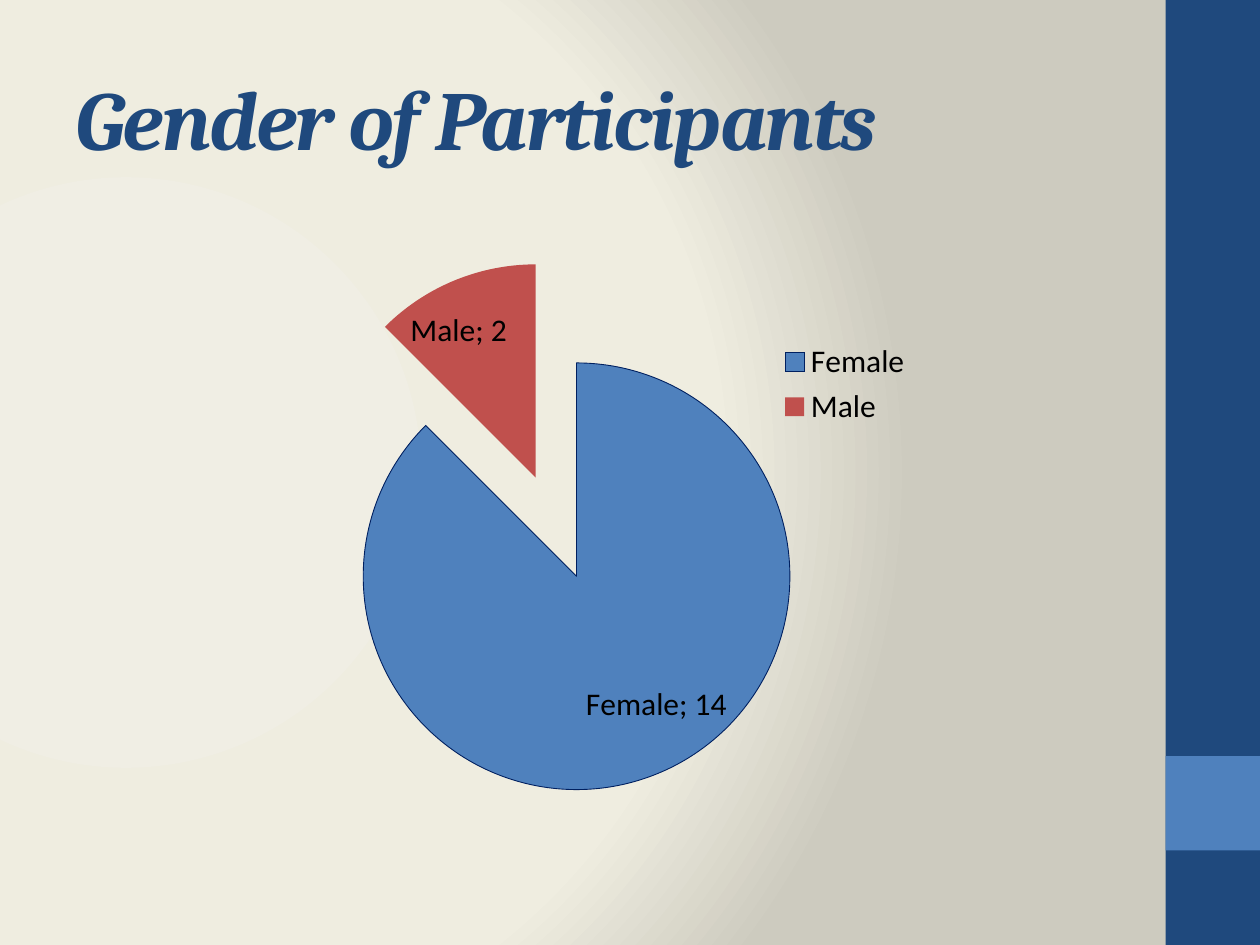
from lxml import etree
from pptx import Presentation
from pptx.chart.data import CategoryChartData
from pptx.dml.color import RGBColor
from pptx.enum.chart import XL_CHART_TYPE as ChartType, XL_LABEL_POSITION as LabelPos, XL_LEGEND_POSITION as LegendPos
from pptx.enum.shapes import MSO_SHAPE as Shape
from pptx.enum.text import MSO_ANCHOR as Anchor
from pptx.oxml import parse_xml
from pptx.oxml.ns import nsdecls, qn
from pptx.util import Inches, Pt


def rgb(value):
    return RGBColor.from_string(value)


def manual_layout(**settings):
    values = "".join(f'<c:{key} val="{value}"/>' for key, value in settings.items())
    return parse_xml(f'<c:layout {nsdecls("c")}><c:manualLayout>{values}</c:manualLayout></c:layout>')


prs = Presentation()
prs.slide_width = Inches(10)
prs.slide_height = Inches(7.5)
slide = prs.slides.add_slide(prs.slide_layouts[6])

background = slide.background.fill
background.gradient()
stops = "".join(
    f'<a:gs pos="{position * 1000}"><a:srgbClr val="{color}"/></a:gs>'
    for position, color in [(0, "F0EEE4"), (75, "EFEDE0"), (100, "CDCBBF")]
)
glow = parse_xml(
    f'<a:gradFill {nsdecls("a")} rotWithShape="1"><a:gsLst>{stops}</a:gsLst>'
    '<a:path path="circle"><a:fillToRect l="20000" t="50000" r="100000" b="50000"/></a:path>'
    "</a:gradFill>"
)
default_glow = slide.element.find(".//" + qn("a:gradFill"))
default_glow.getparent().replace(default_glow, glow)

for top, height, color in [(0, 7.5, "1F497D"), (6, 0.75, "4F81BD")]:
    band = slide.shapes.add_shape(Shape.RECTANGLE, Inches(9.25), Inches(top), Inches(0.75), Inches(height))
    band.shadow.inherit = False
    band.fill.solid()
    band.fill.fore_color.rgb = rgb(color)
    band.line.fill.background()

heading = slide.shapes.add_textbox(Inches(0.5), Inches(0.3), Inches(8.33), Inches(1.25)).text_frame
heading.word_wrap = True
heading.vertical_anchor = Anchor.MIDDLE
heading_run = heading.paragraphs[0].add_run()
heading_run.text = "Gender of Participants"
heading_run.font.name = "Cambria"
heading_run.font.size = Pt(48)
heading_run.font.bold = True
heading_run.font.italic = True
heading_run.font.color.rgb = rgb("1F497D")
heading_run.font._element.set("spc", "-100")

genders = CategoryChartData()
genders.categories = ["Female", "Male"]
genders.add_series("Series 1", [14, 2])
pie = slide.shapes.add_chart(ChartType.PIE, Inches(0), Inches(1.5), Inches(9), Inches(4.8), genders).chart
pie.has_title = False
pie.font.name = "Calibri"
pie.font.size = Pt(18)
pie.font.color.rgb = rgb("000000")

plot_area = pie._chartSpace.chart.plotArea
for old_layout in plot_area.findall(qn("c:layout")):
    plot_area.remove(old_layout)
plot_area.insert(0, manual_layout(layoutTarget="inner", xMode="edge", yMode="edge", x=0.203, y=0.118, w=0.575, h=0.882))

pie.has_legend = True
pie.legend.position = LegendPos.RIGHT
pie.legend.include_in_layout = False
legend_element = pie.legend._element
for old_layout in legend_element.findall(qn("c:layout")):
    legend_element.remove(old_layout)
legend_element.find(qn("c:legendPos")).addnext(
    manual_layout(xMode="edge", yMode="edge", x=0.67, y=0.243, w=0.15, h=0.16)
)

pie_plot = pie.plots[0]
pie_plot.vary_by_categories = True
participants = pie_plot.series[0]

labels = participants.data_labels
labels.show_value = True
labels.show_category_name = True
labels.show_percentage = False
labels.show_legend_key = False
labels.position = LabelPos.INSIDE_END

slices = [("4F81BD", 0.063, -0.071), ("C0504D", -0.041, 0.04)]
for index, (color, shift_x, shift_y) in enumerate(slices):
    point = participants.points[index]
    point.format.fill.solid()
    point.format.fill.fore_color.rgb = rgb(color)
    point.data_label.position = LabelPos.INSIDE_END
    label = labels._element.findall(qn("c:dLbl"))[index]
    label.find(qn("c:showCatName")).set("val", "1")
    label.find(qn("c:idx")).addnext(manual_layout(x=shift_x, y=shift_y))

female_outline = participants.points[0].format.line
female_outline.color.rgb = rgb("002060")
female_outline.width = Pt(0.5)
participants.points[1].format.line.fill.background()

explosion = etree.Element(qn("c:explosion"), val="25")
participants._element.find(qn("c:dPt")).addprevious(explosion)

prs.save("out.pptx")
